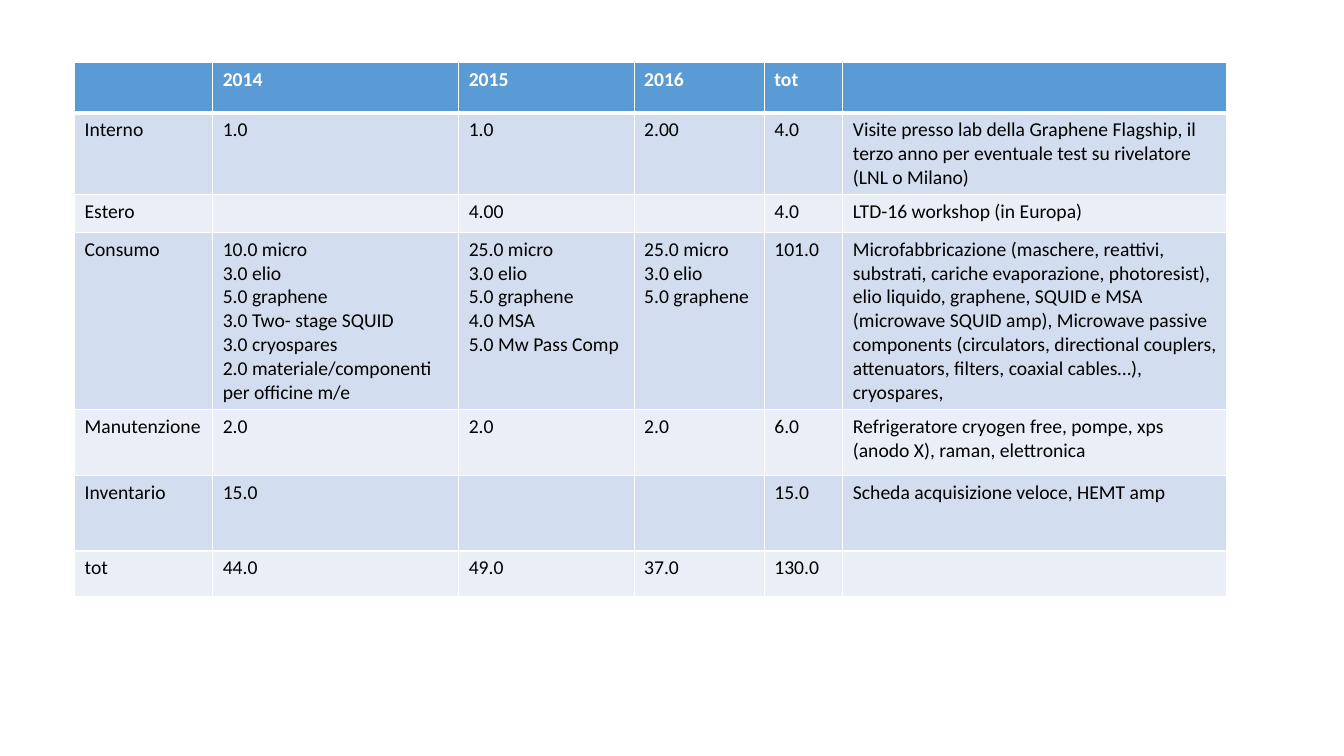
from lxml.etree import SubElement
from pptx import Presentation
from pptx.dml.color import RGBColor
from pptx.oxml.ns import qn
from pptx.util import Cm, Pt

WHITE, BLACK = "FFFFFF", "000000"
HEADER_BLUE, BAND_DARK, BAND_LIGHT = "5B9BD5", "D2DEEF", "EAEFF7"

COLUMN_WIDTHS = [3.48, 6.2, 4.42, 3.28, 1.98, 9.68]
ROW_HEIGHTS = [1.27, 2.06, 0.95, 4.46, 1.66, 1.9, 1.14]
BUDGET = [
    ["", "2014", "2015", "2016", "tot", ""],
    ["Interno", "1.0", "1.0", "2.00", "4.0",
     "Visite presso lab della Graphene Flagship, il terzo anno per eventuale "
     "test su rivelatore (LNL o Milano)"],
    ["Estero", "", "4.00", "", "4.0", "LTD-16 workshop (in Europa)"],
    ["Consumo",
     "10.0 micro\n3.0 elio\n5.0 graphene\n3.0 Two- stage SQUID\n"
     "3.0 cryospares\n2.0 materiale/componenti per officine m/e",
     "25.0 micro\n3.0 elio\n5.0 graphene\n4.0 MSA\n5.0 Mw Pass Comp",
     "25.0 micro\n3.0 elio\n5.0 graphene",
     "101.0",
     "Microfabbricazione (maschere, reattivi, substrati, cariche evaporazione, "
     "photoresist), elio liquido, graphene, SQUID e MSA (microwave SQUID amp), "
     "Microwave passive components (circulators, directional couplers, "
     "attenuators, filters, coaxial cables…), cryospares,"],
    ["Manutenzione", "2.0", "2.0", "2.0", "6.0",
     "Refrigeratore cryogen free, pompe, xps (anodo X), raman, elettronica"],
    ["Inventario", "15.0", "", "", "15.0", "Scheda acquisizione veloce, HEMT amp"],
    ["tot", "44.0", "49.0", "37.0", "130.0", ""],
]


def rgb(value):
    return RGBColor.from_string(value)


class BudgetSlide:
    font_name = "Calibri"
    font_size = Pt(14)

    def __init__(self, presentation):
        self.slide = presentation.slides.add_slide(presentation.slide_layouts[6])

    def table(self, left, top, widths, heights, rows):
        frame = self.slide.shapes.add_table(
            len(rows), len(widths), Cm(left), Cm(top), Cm(sum(widths)), Cm(sum(heights)))
        budget = frame.table
        budget.first_row = budget.horz_banding = False
        for column, width in zip(budget.columns, widths):
            column.width = Cm(width)
        for index, (row, height, texts) in enumerate(zip(budget.rows, heights, rows)):
            row.height = Cm(height)
            for cell, text in zip(row.cells, texts):
                self.cell(cell, text, index)

    def cell(self, cell, text, row_index):
        is_header = row_index == 0
        self.borders(cell, top=3 if row_index == 1 else 1, bottom=3 if is_header else 1)
        cell.fill.solid()
        band = BAND_DARK if row_index % 2 else BAND_LIGHT
        cell.fill.fore_color.rgb = rgb(HEADER_BLUE if is_header else band)
        cell.text = text
        for paragraph in cell.text_frame.paragraphs:
            font = paragraph.font
            font.name, font.size, font.bold = self.font_name, self.font_size, is_header
            font.color.rgb = rgb(WHITE if is_header else BLACK)
            if not text:
                end_mark = SubElement(paragraph._p, qn("a:endParaRPr"))
                end_mark.set("sz", str(int(self.font_size.pt * 100)))

    def borders(self, cell, top, bottom):
        """Draw white cell borders; top and bottom are widths in points."""
        properties = cell._tc.get_or_add_tcPr()
        for side, width in (("L", 1), ("R", 1), ("T", top), ("B", bottom)):
            line = SubElement(properties, qn(f"a:ln{side}"), w=str(Pt(width)))
            fill = SubElement(line, qn("a:solidFill"))
            SubElement(fill, qn("a:srgbClr"), val=WHITE)


def main():
    presentation = Presentation()
    presentation.slide_width, presentation.slide_height = Cm(33.87), Cm(19.05)
    BudgetSlide(presentation).table(1.88, 1.58, COLUMN_WIDTHS, ROW_HEIGHTS, BUDGET)
    presentation.save("out.pptx")


if __name__ == "__main__":
    main()
